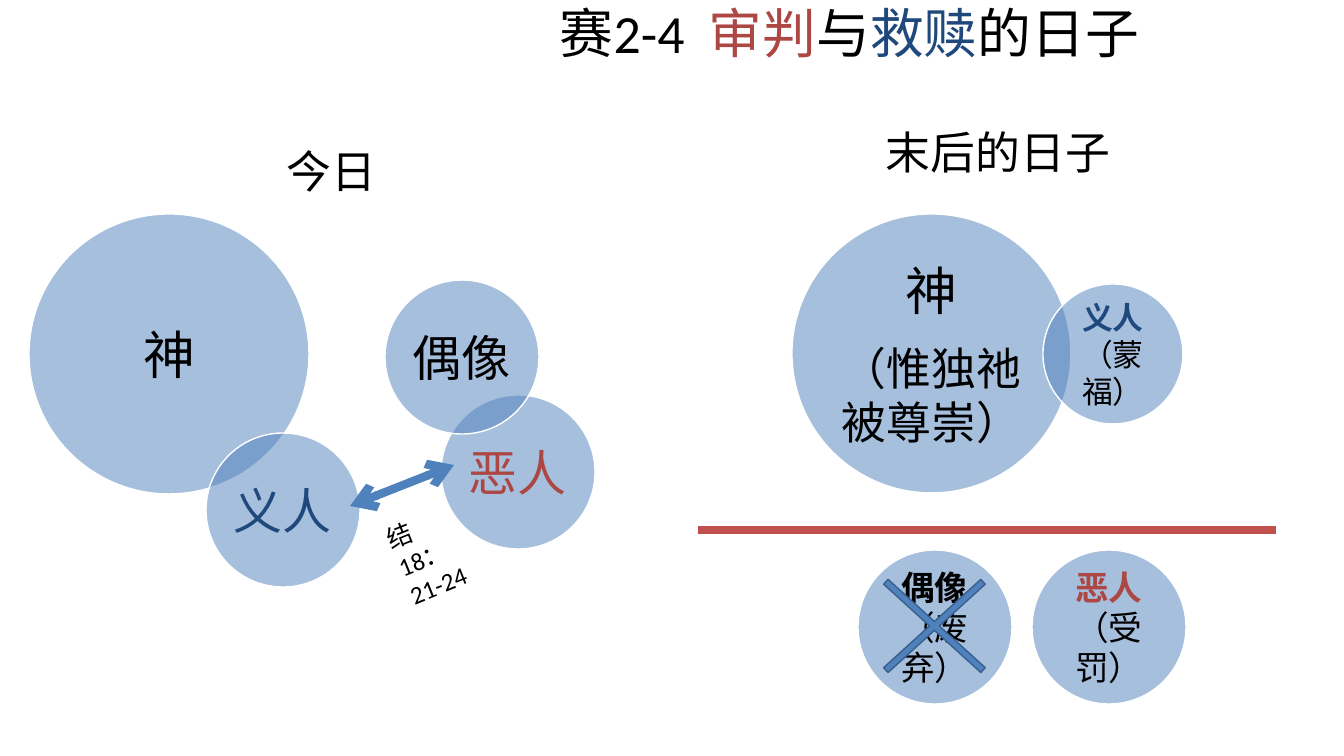
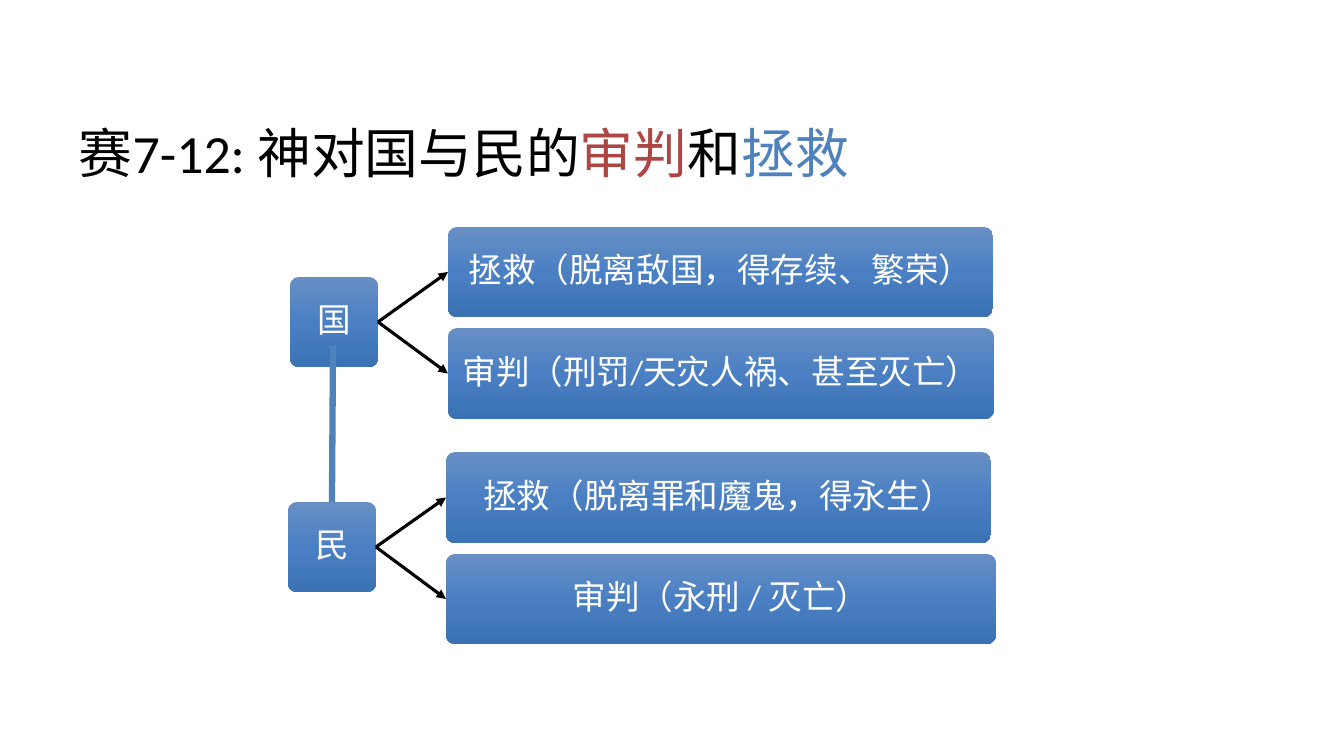
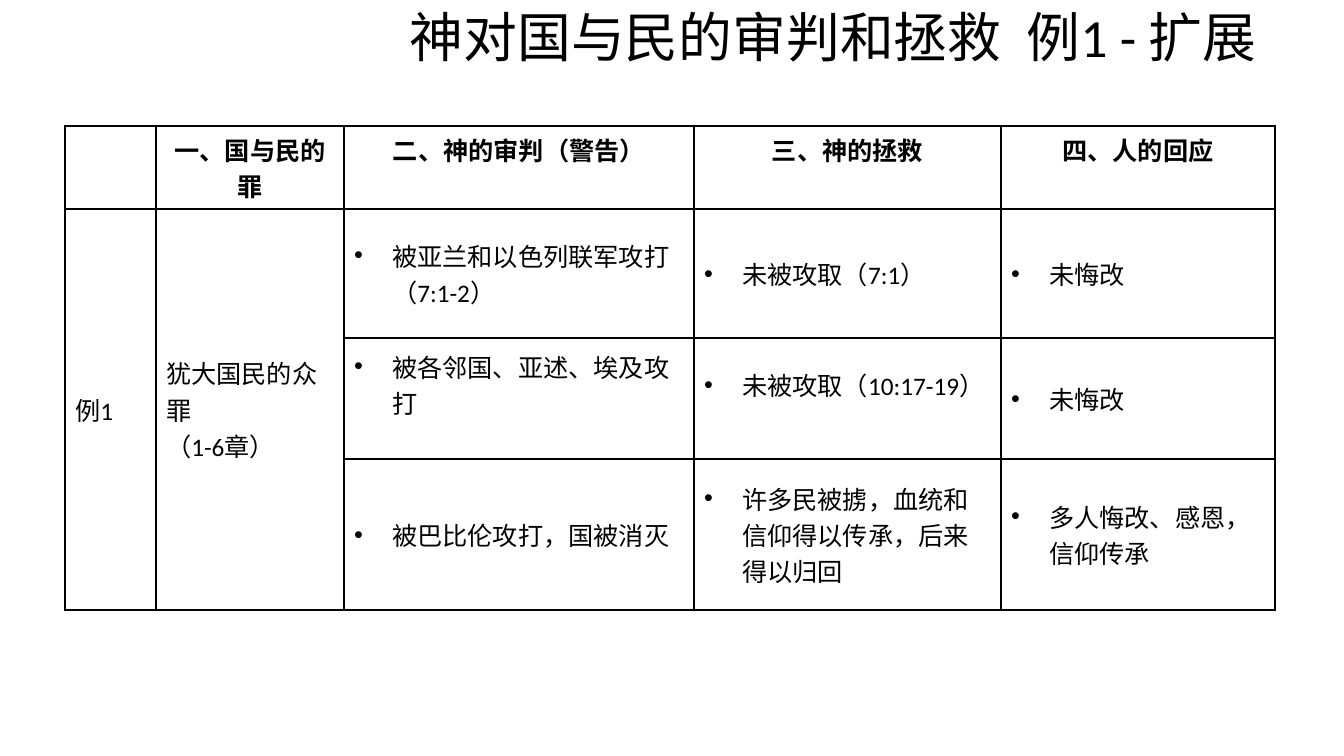
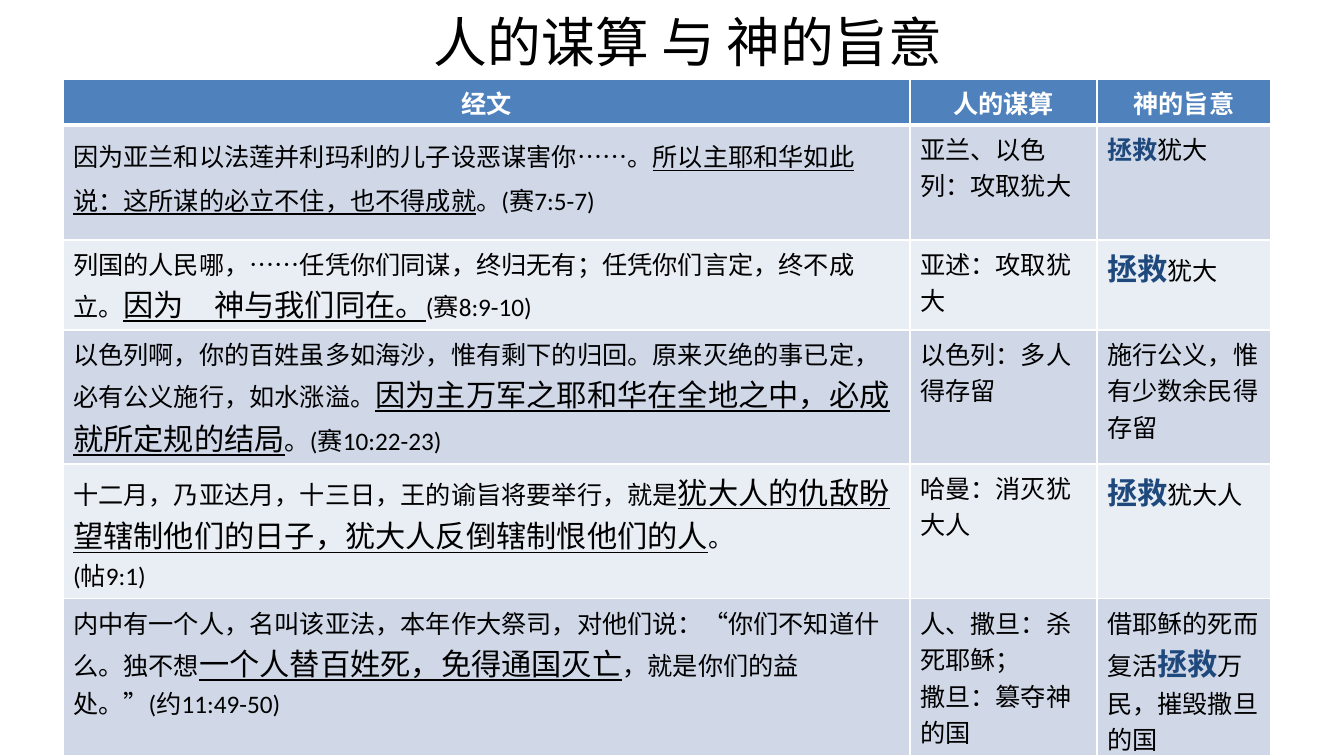
"""Four slides on judgement and salvation in Isaiah."""
from copy import deepcopy

from lxml import etree
from pptx import Presentation
from pptx.dml.color import RGBColor
from pptx.enum.shapes import MSO_CONNECTOR, MSO_SHAPE
from pptx.enum.text import MSO_ANCHOR, MSO_AUTO_SIZE, PP_ALIGN
from pptx.oxml.ns import qn
from pptx.util import Pt

EMU_PER_PX = 914400 / 100.8
FONT = "Calibri"
BLACK = RGBColor(0x00, 0x00, 0x00)
WHITE = RGBColor(0xFF, 0xFF, 0xFF)
RED = RGBColor(0xAC, 0x47, 0x44)
RULE_RED = RGBColor(0xC0, 0x50, 0x4D)
NAVY = RGBColor(0x1F, 0x49, 0x7D)
BLUE = RGBColor(0x4F, 0x81, 0xBD)
CROSS_EDGE = RGBColor(0x3A, 0x5F, 0x8C)
BAND_DARK = RGBColor(0xD0, 0xD8, 0xE8)
BAND_LIGHT = RGBColor(0xE9, 0xED, 0xF4)
GRADIENT = [(0, RGBColor(0x68, 0x8F, 0xC5)), (0.5, RGBColor(0x4A, 0x80, 0xC3)),
            (1, RGBColor(0x3B, 0x72, 0xB3))]
LEFT, CENTER = PP_ALIGN.LEFT, PP_ALIGN.CENTER
TOP, MIDDLE = MSO_ANCHOR.TOP, MSO_ANCHOR.MIDDLE
GROW = MSO_AUTO_SIZE.SHAPE_TO_FIT_TEXT
OVAL, ROUNDED = MSO_SHAPE.OVAL, MSO_SHAPE.ROUNDED_RECTANGLE
CROSS, STRAIGHT = MSO_SHAPE.MATH_MULTIPLY, MSO_CONNECTOR.STRAIGHT

IN_RED = {"color": RED}
IN_NAVY = {"color": NAVY}
IN_BLUE = {"color": BLUE}
BOLD = {"bold": True}
UNDERLINED = {"underline": True}
KEY_VERSE = {"underline": True, "size": Pt(21.6)}
RESCUE = {"color": NAVY, "bold": True}
BIG_RESCUE = {"color": NAVY, "bold": True, "size": Pt(21.6)}


def px(*lengths):
    """Turn pixel lengths into EMU."""
    return [round(length * EMU_PER_PX) for length in lengths]


def write(frame, lines, size, color=BLACK, align=LEFT, spacing=None, inset=None, bold=False):
    """Fill a text frame with lines made of plain or (text, style) pieces."""
    if inset is not None:
        frame.word_wrap = True
        frame.vertical_anchor = MIDDLE
        frame.margin_left, frame.margin_right = px(inset, inset)
        frame.margin_top, frame.margin_bottom = px(inset, inset)
    for number, pieces in enumerate(lines):
        paragraph = frame.add_paragraph() if number else frame.paragraphs[0]
        paragraph.alignment = align
        if spacing:
            paragraph.line_spacing = spacing
        for piece in pieces:
            text, style = piece if isinstance(piece, tuple) else (piece, {})
            run = paragraph.add_run()
            run.text = text
            look = {"name": FONT, "size": Pt(size), "bold": bold, "color": color, **style}
            run.font.color.rgb = look.pop("color")
            for key, value in look.items():
                setattr(run.font, key, value)


deck = Presentation()
deck.slide_width, deck.slide_height = px(1344, 756)

titles = [
    ((359, -5, 981, 74), CENTER, None,
     ["赛2-4  ", ("审判", IN_RED), "与", ("救赎", IN_NAVY), "的日子"]),
    ((69, 88, 1210, 95), LEFT, 1.5,
     ["赛7-12: 神对国与民的", ("审判", IN_RED), "和", ("拯救", IN_BLUE)]),
    ((400, 0, 915, 72), LEFT, None, ["神对国与民的审判和拯救\t 例1 - 扩展"]),
    ((424, 0, 810, 82), LEFT, None, ["人的谋算 与 神的旨意"]),
]
slides = []
for box, align, spacing, pieces in titles:
    slide = deck.slides.add_slide(deck.slide_layouts[6])
    slides.append(slide)
    title = slide.shapes.add_textbox(*px(*box)).text_frame
    title.word_wrap = True
    title.vertical_anchor = MIDDLE
    write(title, [pieces], 38.4, align=align, spacing=spacing)
days, nations, example, plans = slides

for box, text in [((771, 96, 454, 112), "末后的日子"), ((140, 115, 383, 112), "今日")]:
    heading = days.shapes.add_textbox(*px(*box)).text_frame
    heading.word_wrap = True
    heading.vertical_anchor = MIDDLE
    write(heading, [[text]], 32, align=CENTER)

circles = [
    (792, 214, 279, 37, 5, [["神"], [("（惟独祂被尊崇）", {"size": Pt(32)})]]),
    (1043, 284, 140, 22, 3, [[("义人", RESCUE), "（蒙福）"]]),
    (1032, 550, 154, 24, 3, [[("恶人", {**IN_RED, **BOLD}), "（受罚）"]]),
    (858, 550, 154, 24, 3, [[("偶像", BOLD), "（废弃）"]]),
    (29, 214, 280, 37, 5, [["神"]]),
    (206, 433, 154, 35, 5, [[("义人", IN_NAVY)]]),
    (441, 395, 154, 35, 5, [[("恶人", IN_RED)]]),
    (385, 280, 154, 35, 5, [["偶像"]]),
]
for left, top, diameter, size, inset, lines in circles:
    circle = days.shapes.add_shape(OVAL, *px(left, top, diameter, diameter))
    circle.shadow.inherit = False
    circle.fill.solid()
    circle.fill.fore_color.rgb = BLUE
    tint = circle._element.spPr.find(qn("a:solidFill"))[0]
    etree.SubElement(tint, qn("a:alpha"), val="50000")
    circle.line.color.rgb = WHITE
    circle.line.width = Pt(1)
    write(circle.text_frame, lines, size, align=CENTER, inset=inset)
    if len(lines) > 1:
        circle.text_frame.paragraphs[0].space_after = Pt(14)

rejection = days.shapes.add_shape(CROSS, *px(841, 541, 187, 170))
rejection.adjustments[0] = 0.039
rejection.shadow.inherit = False
rejection.fill.solid()
rejection.fill.fore_color.rgb = BLUE
rejection.line.color.rgb = CROSS_EDGE
rejection.line.width = Pt(1)

verse = days.shapes.add_textbox(*px(382, 507, 81, 72))
verse.rotation = 338
verse.text_frame.word_wrap = True
verse.text_frame.auto_size = GROW
write(verse.text_frame, [["结18：21-24"]], 18)

divider = days.shapes.add_connector(STRAIGHT, *px(698, 530, 1276, 530))
conflict = days.shapes.add_connector(STRAIGHT, *px(350, 506, 454, 465))
links = [(divider, RULE_RED, 6, []),
         (conflict, BLUE, 6, [("a:headEnd", "arrow"), ("a:tailEnd", "arrow")])]

branches = [
    ((290, 277, 88, 90), "国",
     [((448, 227, 545, 90), "拯救（脱离敌国，得存续、繁荣）"),
      ((448, 328, 546, 91), "审判（刑罚/天灾人祸、甚至灭亡）")]),
    ((288, 502, 88, 90), "民",
     [((446, 452, 545, 91), "拯救（脱离罪和魔鬼，得永生）"),
      ((446, 554, 550, 90), "审判（永刑 / 灭亡）")]),
]
for root_box, root_text, outcomes in branches:
    nodes = []
    for box, text in [(root_box, root_text), *outcomes]:
        node = nations.shapes.add_shape(ROUNDED, *px(*box))
        nodes.append(node)
        node.adjustments[0] = 0.1
        node.shadow.inherit = False
        node.line.fill.background()
        node.fill.gradient()
        node.fill.gradient_angle = 270
        stops = node._element.spPr.find(".//" + qn("a:gsLst"))
        stops.insert(1, deepcopy(stops[0]))
        for stop, (position, color) in zip(node.fill.gradient_stops, GRADIENT):
            stop.position = position
            stop.color.rgb = color
        write(node.text_frame, [[text]], 24, WHITE, CENTER, 0.9, inset=2)
    root = nodes[0]
    for outcome in nodes[1:]:
        arrow = nations.shapes.add_connector(STRAIGHT, 0, 0, 0, 0)
        arrow.begin_connect(root, 3)
        arrow.end_connect(outcome, 1)
        links.append((arrow, BLACK, 2.25, [("a:tailEnd", "triangle")]))

stem = nations.shapes.add_connector(STRAIGHT, *px(333, 346, 333, 502))
stem.end_connect(root, 0)
links.append((stem, BLUE, 4.5, []))

for link, color, width, ends in links:
    link.line.color.rgb = color
    link.line.width = Pt(width)
    for tag, kind in ends:
        etree.SubElement(link.line._ln, qn(tag), type=kind)
    etree.SubElement(link._element.spPr, qn("a:effectLst"))

example_rows = [
    [[], [["一、国与民的罪"]], [["二、神的审判（警告）"]], [["三、神的拯救"]], [["四、人的回应"]]],
    [[["例1"]], [["犹大国民的众罪"], ["（1-6章）"]],
     [["被亚兰和以色列联军攻打（7:1-2）"]], [["未被攻取（7:1）"]], [["未悔改"]]],
    [[], [], [["被各邻国、亚述、埃及攻打"]], [["未被攻取（10:17-19）"]], [["未悔改"]]],
    [[], [], [["被巴比伦攻打，国被消灭"]],
     [["许多民被掳，血统和信仰得以传承，后来得以归回"]], [["多人悔改、感恩，信仰传承"]]],
]
plan_rows = [
    [[["经文"]], [["人的谋算"]], [["神的旨意"]]],
    [[["因为亚兰和以法莲并利玛利的儿子设恶谋害你……。",
       ("所以主耶和华如此说：这所谋的必立不住，也不得成就", UNDERLINED), "。(赛7:5-7)"]],
     [["亚兰、以色列：攻取犹大"]], [[("拯救", RESCUE), "犹大"]]],
    [[["列国的人民哪，……任凭你们同谋，终归无有；任凭你们言定，终不成立。",
       ("因为　神与我们同在。", KEY_VERSE), "(赛8:9-10)"]],
     [["亚述：攻取犹大"]], [[("拯救", BIG_RESCUE), "犹大"]]],
    [[["以色列啊，你的百姓虽多如海沙，惟有剩下的归回。原来灭绝的事已定，必有公义施行，如水涨溢。",
       ("因为主万军之耶和华在全地之中，必成就所定规的结局", KEY_VERSE), "。(赛10:22-23)"]],
     [["以色列：多人得存留"]], [["施行公义，惟有少数余民得存留"]]],
    [[["十二月，乃亚达月，十三日，王的谕旨将要举行，就是",
       ("犹大人的仇敌盼望辖制他们的日子，犹大人反倒辖制恨他们的人", KEY_VERSE), "。"],
      ["(帖9:1)"]],
     [["哈曼：消灭犹大人"]], [[("拯救", BIG_RESCUE), "犹大人"]]],
    [[["内中有一个人，名叫该亚法，本年作大祭司，对他们说：“你们不知道什么。独不想",
       ("一个人替百姓死，免得通国灭亡", KEY_VERSE), "，就是你们的益处。”(约11:49-50)"]],
     [["人、撒旦：杀死耶稣；"], ["撒旦：篡夺神的国"]],
     [["借耶稣的死而复活", ("拯救", BIG_RESCUE), "万民，摧毁撒旦的国"]]],
]
grids = [
    (example, 65, 126, [91, 188, 350, 307, 274], [83, 129, 121, 151], example_rows,
     BLACK, BLACK, 1, MIDDLE, []),
    (plans, 63, 79, [847, 187, 174], [46, 115, 90, 134, 135, 157], plan_rows,
     WHITE, WHITE, 3, TOP, [BLUE] + [BAND_DARK, BAND_LIGHT] * 2 + [BAND_DARK]),
]
tables = []
for (slide, left, top, widths, heights, rows, edge, header_color, header_rule,
     anchor, fills) in grids:
    table = slide.shapes.add_table(len(rows), len(widths),
                                   *px(left, top, sum(widths), sum(heights))).table
    tables.append(table)
    table.first_row = table.horz_banding = False
    for column, width in zip(table.columns, px(*widths)):
        column.width = width
    for r, (height, row) in enumerate(zip(px(*heights), rows)):
        table.rows[r].height = height
        for c, lines in enumerate(row):
            cell = table.cell(r, c)
            header = r == 0
            cell.vertical_anchor = TOP if header else anchor
            write(cell.text_frame, lines, 18, header_color if header else BLACK,
                  CENTER if header else LEFT, bold=header)
            for paragraph in cell.text_frame.paragraphs:
                paragraph._p.get_or_add_pPr().set("hangingPunct", "0")
            properties = cell._tc.get_or_add_tcPr()
            for tag in ("a:lnL", "a:lnR", "a:lnT", "a:lnB"):
                thick = (header and tag == "a:lnB") or (r == 1 and tag == "a:lnT")
                width = Pt(header_rule if thick else 1)
                border = etree.SubElement(properties, qn(tag), w=str(width))
                paint = etree.SubElement(border, qn("a:solidFill"))
                etree.SubElement(paint, qn("a:srgbClr"), val=str(edge))
            if fills:
                cell.fill.solid()
                cell.fill.fore_color.rgb = fills[r]
            else:
                cell.fill.background()

example_table, plan_table = tables
plan_table.cell(1, 0).text_frame.paragraphs[0].line_spacing = 1.2
indent = px(38)[0]
for r in range(1, 4):
    for c in range(2, 5):
        bullet = example_table.cell(r, c).text_frame.paragraphs[0]._p.get_or_add_pPr()
        bullet.set("marL", str(indent))
        bullet.set("indent", str(-indent))
        etree.SubElement(bullet, qn("a:buFont"), typeface="Arial")
        etree.SubElement(bullet, qn("a:buChar"), char="•")
for c in (2, 3):
    example_table.cell(2, c).margin_bottom = px(33)[0]
for c in (0, 1):
    example_table.cell(1, c).merge(example_table.cell(3, c))

deck.save("out.pptx")
